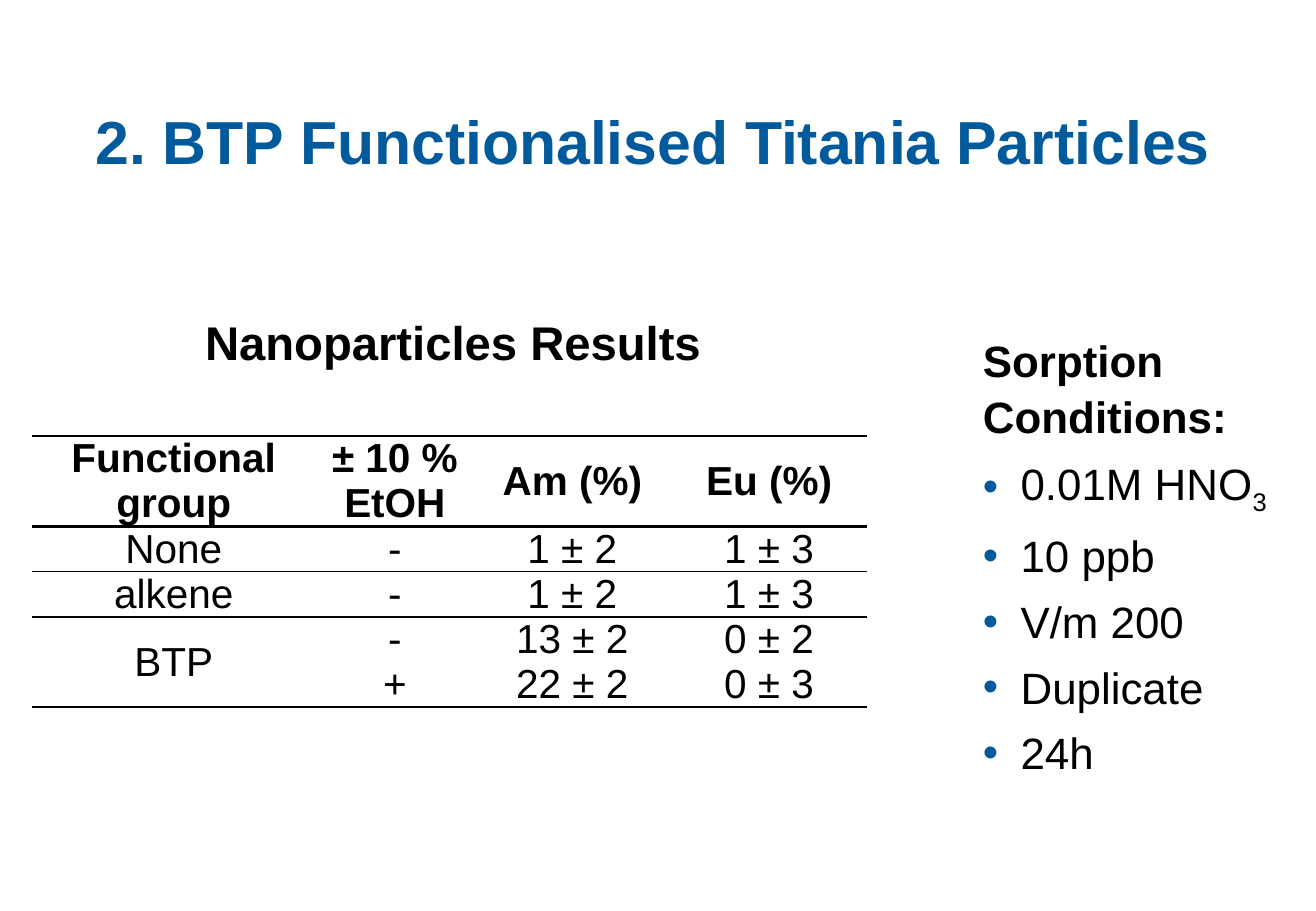
from lxml import etree
from pptx import Presentation
from pptx.dml.color import RGBColor
from pptx.enum.text import MSO_ANCHOR, PP_ALIGN
from pptx.oxml.ns import qn
from pptx.util import Inches, Pt

CENTER, LEFT = PP_ALIGN.CENTER, PP_ALIGN.LEFT
TOP, MIDDLE = MSO_ANCHOR.TOP, MSO_ANCHOR.MIDDLE

COLOURS = {"blue": "005A9B", "black": "000000", "white": "FFFFFF"}
FONT = "Arial"
SLIDE_WIDTH, SLIDE_HEIGHT = Inches(10.83), Inches(7.5)
LINE_SPACING = 1.08

COLUMN_WIDTHS = [2.34, 1.3, 1.62, 1.62]
ROW_HEIGHTS = [0.74, 0.37, 0.37, 0.37, 0.37]
RESULTS = [
    ["Functional group", "± 10\u00a0% EtOH", "Am (%)", "Eu (%)"],
    ["None", "-", "1 ± 2", "1 ± 3"],
    ["alkene", "-", "1 ± 2", "1 ± 3"],
    ["BTP", "-", "13 ± 2", "0 ± 2"],
    ["", "+", "22 ± 2", "0 ± 3"],
]
# Line widths in points above each row, then below the last one
RULES = [1.5, 1.5, 1, 1, 0, 1]
CONDITIONS = ["0.01M HNO", "10 ppb", "V/m 200", "Duplicate", "24h"]


def place(left, top, width, height):
    """Turn percentages of the slide into lengths."""
    return (round(SLIDE_WIDTH * left / 100), round(SLIDE_HEIGHT * top / 100),
            round(SLIDE_WIDTH * width / 100), round(SLIDE_HEIGHT * height / 100))


def format_paragraph(paragraph, size, colour="black", bold=False, align=LEFT):
    paragraph.alignment = align
    for run in paragraph.runs:
        run.font.name = FONT
        run.font.size = Pt(size)
        run.font.bold = bold
        run.font.color.rgb = RGBColor.from_string(COLOURS[colour])


def add_bullet(paragraph):
    properties = paragraph._p.get_or_add_pPr()
    indent = Inches(0.31)
    properties.set("marL", str(indent))
    properties.set("indent", str(-indent))
    colour = etree.SubElement(properties, qn("a:buClr"))
    etree.SubElement(colour, qn("a:srgbClr"), val=COLOURS["blue"])
    etree.SubElement(properties, qn("a:buFont"), typeface=FONT)
    etree.SubElement(properties, qn("a:buChar"), char="•")


def add_title(slide):
    title = slide.shapes.title
    title.left, title.top, title.width, title.height = place(0, 10.13, 99.26, 9.47)
    frame = title.text_frame
    frame.text = "2. BTP Functionalised Titania Particles"
    frame.vertical_anchor = TOP
    frame.paragraphs[0].line_spacing = LINE_SPACING
    format_paragraph(frame.paragraphs[0], 36, "blue", True, CENTER)


def add_heading_box(slide, box, text, size, wrap):
    frame = slide.shapes.add_textbox(*box).text_frame
    frame.word_wrap = wrap
    frame.text = text
    frame.paragraphs[0].line_spacing = LINE_SPACING
    format_paragraph(frame.paragraphs[0], size, bold=True)
    return frame


def add_conditions(slide):
    frame = add_heading_box(slide, place(73.78, 35.47, 25.48, 54.13),
                            "Sorption Conditions:", 26, True)
    for condition in CONDITIONS:
        paragraph = frame.add_paragraph()
        paragraph.text = condition
        paragraph.line_spacing = LINE_SPACING
        paragraph.space_before = Pt(5.2)
        add_bullet(paragraph)
        if condition.endswith("HNO"):
            subscript = paragraph.add_run()
            subscript.text = "3"
            subscript._r.get_or_add_rPr().set("baseline", "-25000")
        format_paragraph(paragraph, 26)


def set_borders(cell, above, below):
    properties = cell._tc.get_or_add_tcPr()
    for side, width in (("L", 0), ("R", 0), ("T", above), ("B", below)):
        line = etree.SubElement(properties, qn(f"a:ln{side}"), w=str(Pt(width)))
        if width:
            fill = etree.SubElement(line, qn("a:solidFill"))
            etree.SubElement(fill, qn("a:srgbClr"), val=COLOURS["black"])
        else:
            etree.SubElement(line, qn("a:noFill"))


def format_cell(cell, text, row):
    cell.text = text
    format_paragraph(cell.text_frame.paragraphs[0], 24, bold=row == 0, align=CENTER)
    cell.margin_left = cell.margin_right = Inches(0.08)
    cell.margin_top = cell.margin_bottom = 0
    cell.vertical_anchor = MIDDLE if row == 0 or text == "BTP" else TOP
    set_borders(cell, RULES[row], RULES[row + 1])
    cell.fill.solid()
    cell.fill.fore_color.rgb = RGBColor.from_string(COLOURS["white"])


def add_results(slide):
    left, top, width, _ = place(2.4, 47.87, 63.53, 0)
    table = slide.shapes.add_table(len(RESULTS), len(COLUMN_WIDTHS), left, top, width,
                                   Inches(sum(ROW_HEIGHTS))).table
    table.first_row = table.horz_banding = False
    for column, column_width in zip(table.columns, COLUMN_WIDTHS):
        column.width = Inches(column_width)
    for row, row_height in zip(table.rows, ROW_HEIGHTS):
        row.height = Inches(row_height)
    for row, texts in enumerate(RESULTS):
        for column, text in enumerate(texts):
            format_cell(table.cell(row, column), text, row)
    # The BTP group covers both ethanol conditions
    group = table.cell(3, 0)
    group.merge(table.cell(4, 0))
    bottom = group._tc.tcPr.find(qn("a:lnB"))
    bottom.getparent().remove(bottom)
    group._tc.tcPr.insert(3, etree.fromstring(
        etree.tostring(table.cell(4, 0)._tc.tcPr.find(qn("a:lnB")))))


def main():
    presentation = Presentation()
    presentation.slide_width, presentation.slide_height = SLIDE_WIDTH, SLIDE_HEIGHT
    slide = presentation.slides.add_slide(presentation.slide_layouts[5])
    add_title(slide)
    add_results(slide)
    add_heading_box(slide, place(14.68, 33.2, 39.98, 7.6), "Nanoparticles Results", 28, False)
    add_conditions(slide)
    presentation.save("out.pptx")


if __name__ == "__main__":
    main()
